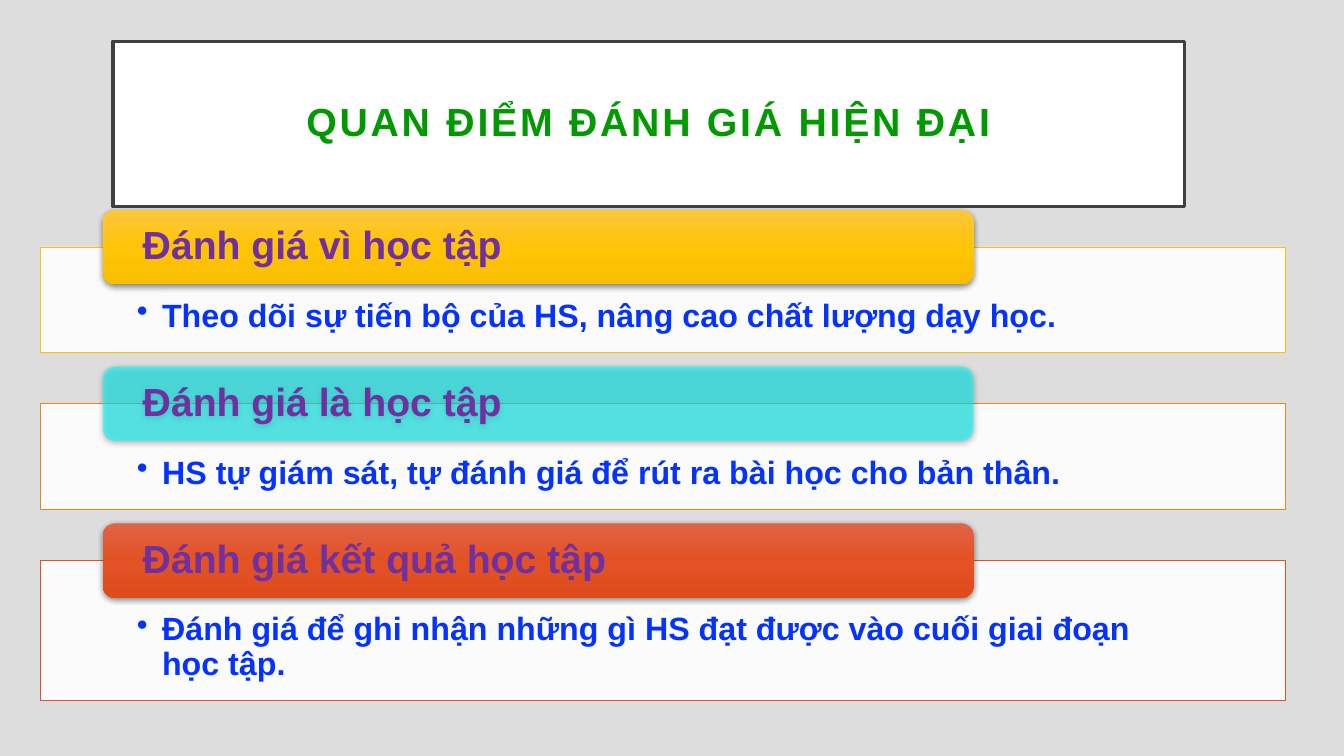
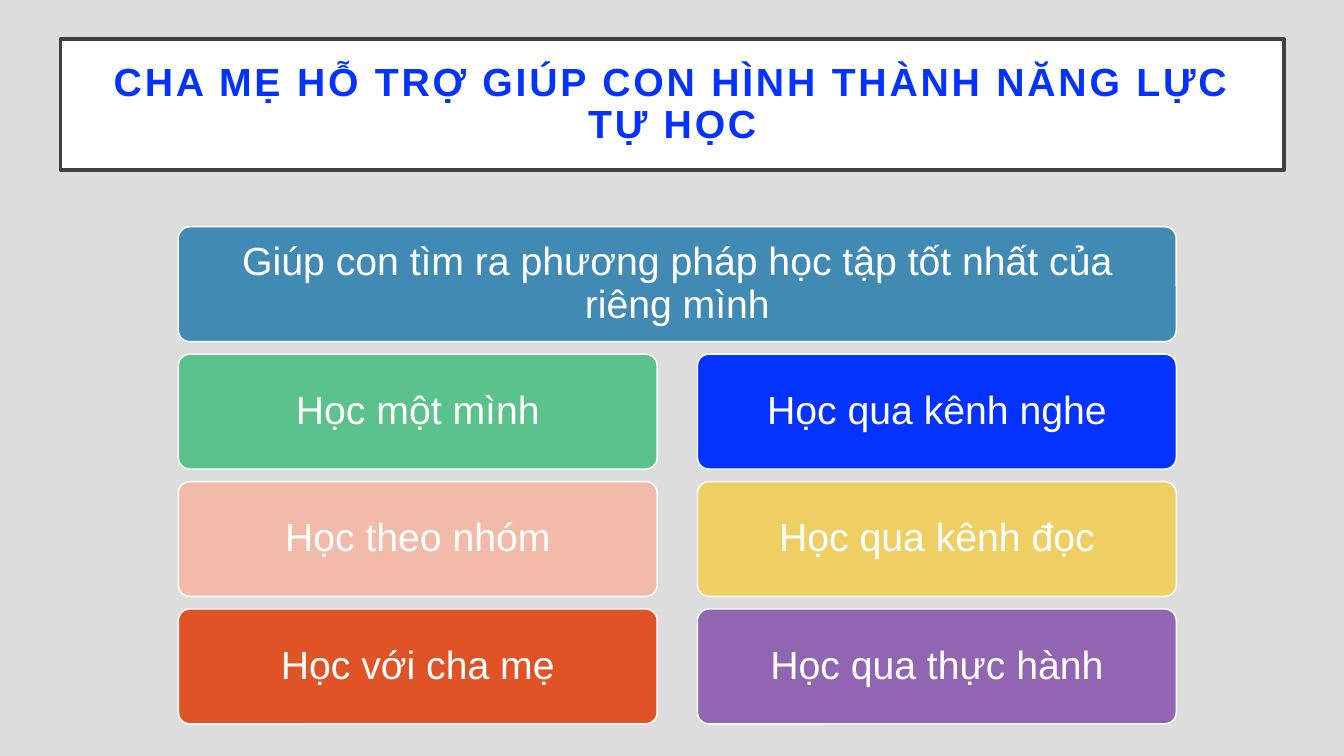
from copy import deepcopy

from lxml import etree
from pptx import Presentation
from pptx.dml.color import RGBColor
from pptx.enum.shapes import MSO_SHAPE
from pptx.enum.text import MSO_ANCHOR, PP_ALIGN
from pptx.oxml.ns import qn
from pptx.util import Pt

RECT, ROUND = MSO_SHAPE.RECTANGLE, MSO_SHAPE.ROUNDED_RECTANGLE
LEFT, CENTER = PP_ALIGN.LEFT, PP_ALIGN.CENTER
TOP, MIDDLE = MSO_ANCHOR.TOP, MSO_ANCHOR.MIDDLE

WHITE, GREY, DARK = "FFFFFF", "DDDDDD", "404040"
BLUE, GREEN, PURPLE = "0432FF", "009900", "7030A0"


def paint(fill, hue):
    fill.solid()
    fill.fore_color.rgb = RGBColor.from_string(hue)


def box(slide, kind, at, text, size, ink, hue, alpha=100, line=None, width=1,
        bold=True, align=CENTER, anchor=MIDDLE, pad=(0, 0, 0, 0)):
    """Add a shape with one paragraph; pad is left, top, right, bottom."""
    shape = slide.shapes.add_shape(kind, *[Pt(n) for n in at])
    shape.shadow.inherit = False
    paint(shape.fill, hue)
    if alpha < 100:
        color = shape.element.spPr.find(qn("a:solidFill"))[0]
        etree.SubElement(color, qn("a:alpha"), val=str(alpha * 1000))
    if line:
        paint(shape.line.fill, line)
        shape.line.width = Pt(width)
    else:
        shape.line.fill.background()
    frame = shape.text_frame
    frame.word_wrap = True
    frame.vertical_anchor = anchor
    frame.margin_left, frame.margin_top, frame.margin_right, frame.margin_bottom = [
        Pt(n) for n in pad]
    para = frame.paragraphs[0]
    para.text = text
    para.alignment = align
    para.line_spacing = 0.9
    para.font.name = "Arial"
    para.font.size = Pt(size)
    para.font.bold = bold
    paint(para.font.fill, ink)
    return shape


prs = Presentation()
prs.slide_width, prs.slide_height = Pt(960), Pt(540)
paint(prs.slide_master.background.fill, GREY)

# Titles
heads = [
    ("QUAN ĐIỂM ĐÁNH GIÁ HIỆN ĐẠI", GREEN, (80.6, 29.5, 765.4, 118)),
    ("CHA MẸ HỖ TRỢ GIÚP CON HÌNH THÀNH NĂNG LỰC TỰ HỌC", BLUE,
     (43.2, 28, 874, 93.6)),
]
slides = []
for text, ink, at in heads:
    slide = prs.slides.add_slide(prs.slide_layouts[6])
    title = box(slide, RECT, at, text, 28, ink, WHITE, line=DARK, width=2.5,
                pad=(14.4,) * 4)
    run = title.text_frame.paragraphs[0].runs[0]
    run.font._element.set("spc", "200")
    slides.append(slide)
views, ways = slides

# Slide 1: panels, each with a tab over its top edge
panels = [
    ("Đánh giá vì học tập",
     "Theo dõi sự tiến bộ của HS, nâng cao chất lượng dạy học.",
     75.6, "FEC306", ("FEC73E", "FFC405", "F9BE00")),
    ("Đánh giá là học tập",
     "HS tự giám sát, tự đánh giá để rút ra bài học cho bản thân.",
     75.6, "EE8317", None),
    ("Đánh giá kết quả học tập",
     "Đánh giá để ghi nhận những gì HS đạt được vào cuối giai đoạn học tập.",
     100, "DF5327", ("E16346", "E25224", "DF4B1D")),
]
for row, (name, note, high, edge, blend) in enumerate(panels):
    top = 176.4 + 112 * row
    panel = box(views, RECT, (28.8, top, 889.2, high), note, 23, BLUE, WHITE,
                alpha=90, line=edge, width=0.5, align=LEFT, anchor=TOP,
                pad=(69, 37.5, 69, 13))
    props = panel.text_frame.paragraphs[0]._p.get_or_add_pPr()
    props.set("marL", str(Pt(18)))
    props.set("indent", str(Pt(-18)))
    bullet = etree.Element(qn("a:buChar"), char="•")
    props.find(qn("a:defRPr")).addprevious(bullet)

    tab = box(views, ROUND, (73.4, top - 26.6, 622, 53.3), name, 28, PURPLE,
              "00FDFF", alpha=55, align=LEFT, pad=(26, 0, 26, 0))
    if blend:
        tab.fill.gradient()
        tab.fill.gradient_angle = 270
        stops = tab.element.spPr.find(qn("a:gradFill")).find(qn("a:gsLst"))
        stops.append(deepcopy(stops[-1]))
        for stop, hue, place in zip(tab.fill.gradient_stops, blend, (0, 0.5, 1)):
            stop.color.rgb = RGBColor.from_string(hue)
            stop.position = place
    effects = tab.element.spPr.find(qn("a:effectLst"))
    shade = etree.SubElement(effects, qn("a:outerShdw"), blurRad=str(Pt(4.4)),
                             dist=str(Pt(1.2)), dir="5400000", rotWithShape="0")
    color = etree.SubElement(shade, qn("a:srgbClr"), val="000000")
    etree.SubElement(color, qn("a:alpha"), val="45000")

# Slide 2: one wide tile above two columns of three
tiles = [
    (0, 0, 712.8, "Giúp con tìm ra phương pháp học tập tốt nhất của riêng mình",
     "418AB3", 100),
    (0, 1, 342, "Học một mình", "00B050", 58),
    (0, 2, 342, "Học theo nhóm", "F2BAA9", 100),
    (0, 3, 342, "Học với cha mẹ", "DF5327", 100),
    (1, 1, 342, "Học qua kênh nghe", BLUE, 100),
    (1, 2, 342, "Học qua kênh đọc", "FEC306", 56),
    (1, 3, 342, "Học qua thực hành", PURPLE, 69),
]
for col, row, wide, text, hue, alpha in tiles:
    at = (127.4 + 370.8 * col, 162 + 91 * row, wide, 82)
    tile = box(ways, ROUND, at, text, 28, WHITE, hue, alpha=alpha, line=WHITE,
               bold=False, pad=(10,) * 4)
    tile.adjustments[0] = 0.1

prs.save("out.pptx")
